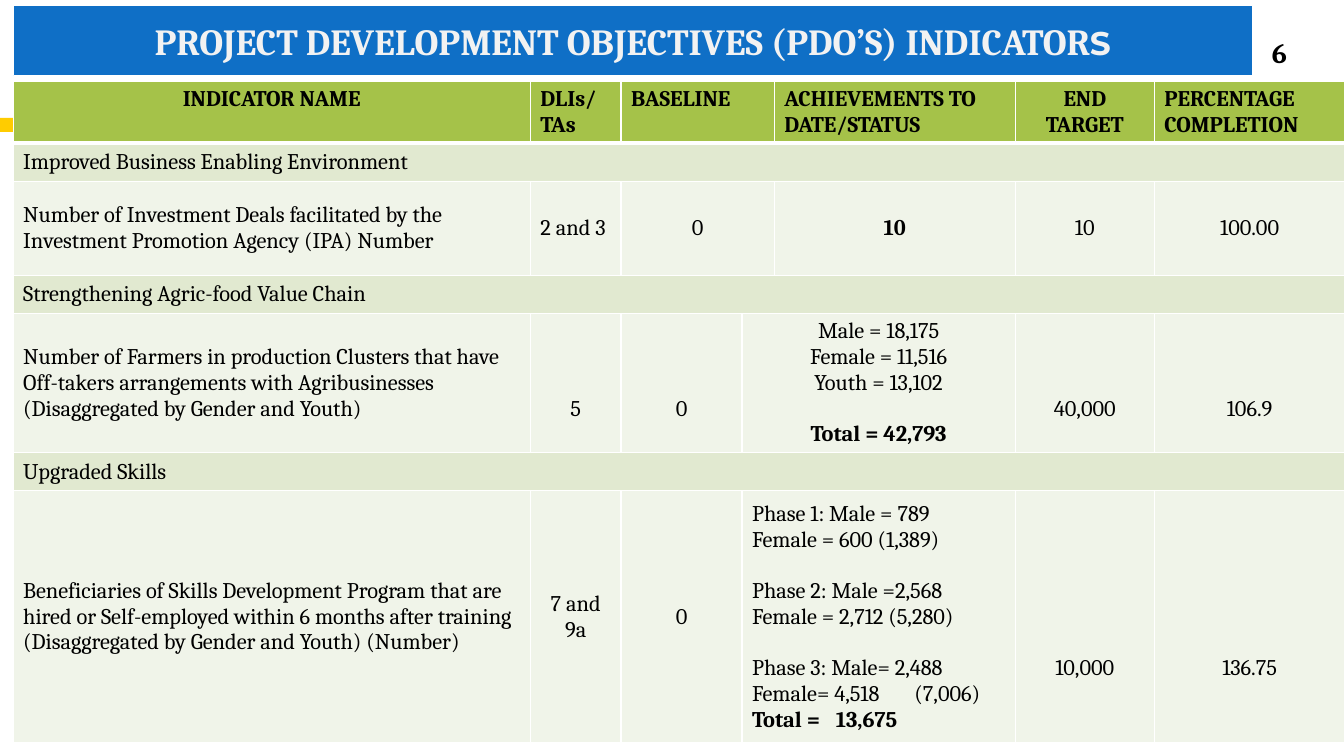
from dataclasses import dataclass

from lxml import etree
from pptx import Presentation
from pptx.dml.color import RGBColor
from pptx.enum.shapes import MSO_SHAPE
from pptx.enum.text import MSO_ANCHOR, MSO_AUTO_SIZE, PP_ALIGN
from pptx.oxml.ns import qn
from pptx.util import Inches, Pt

LEFT, CENTER = PP_ALIGN.LEFT, PP_ALIGN.CENTER
TOP, MIDDLE = MSO_ANCHOR.TOP, MSO_ANCHOR.MIDDLE
RECTANGLE = MSO_SHAPE.RECTANGLE
NO_AUTOFIT = MSO_AUTO_SIZE.NONE


@dataclass(frozen=True)
class Theme:
    font: str = "Cambria"
    accent_font: str = "Montserrat"
    banner: str = "0F6FC6"
    banner_text: str = "F2F2F2"
    stripe: str = "FFCC00"
    header: str = "A5C249"
    section: str = "E1E9D0"
    indicator: str = "F0F4E9"
    border: str = "FFFFFF"
    text: str = "000000"
    title_size: float = 26.3
    accent_size: float = 23.4
    number_size: float = 20
    table_size: float = 16
    line_height: float = 18.4


@dataclass(frozen=True)
class Line:
    text: str
    bold: bool = False
    gap: bool = False  # one line of space above
    tab: float = 0  # tab stop in inches


@dataclass(frozen=True)
class Entry:
    column: int
    lines: tuple[Line, ...]
    align: PP_ALIGN = CENTER
    span: int = 1
    drop: int = 0  # lines by which the text sits lower


THEME = Theme()
COLUMN_WIDTHS = (5.13, 0.9, 1.2, 0.32, 2.39, 1.38, 1.89)
ROW_HEIGHTS = (0.61, 0.38, 0.93, 0.38, 1.38, 0.38, 2.5)


def entry(column: int, text: str, align: PP_ALIGN = CENTER, span: int = 1,
          drop: int = 0, bold: bool = False) -> Entry:
    return Entry(column, (Line(text, bold),), align, span, drop)


HEADER = tuple(
    entry(column, text, align, span, bold=True)
    for column, text, align, span in (
        (0, "INDICATOR NAME", CENTER, 1),
        (1, "DLIs/ TAs", LEFT, 1),
        (2, "BASELINE", LEFT, 2),
        (4, "ACHIEVEMENTS TO DATE/STATUS", LEFT, 1),
        (5, "END TARGET", CENTER, 1),
        (6, "PERCENTAGE COMPLETION", LEFT, 1),
    )
)
INVESTMENT_DEALS = (
    entry(0, "Number of Investment Deals facilitated by the Investment "
             "Promotion Agency (IPA) Number", LEFT),
    entry(1, "2 and 3", LEFT),
    entry(2, "0", span=2),
    entry(4, "10", bold=True),
    entry(5, "10"),
    entry(6, "100.00"),
)
FARMERS = (
    entry(0, "Number of Farmers in production Clusters that have Off-takers "
             "arrangements with Agribusinesses (Disaggregated by Gender and Youth)", LEFT),
    entry(1, "5", drop=2),
    entry(2, "0", drop=2),
    Entry(3, (
        Line("Male = 18,175"),
        Line("Female = 11,516"),
        Line("Youth = 13,102"),
        Line("Total = 42,793", bold=True, gap=True),
    ), span=2),
    entry(5, "40,000", drop=2),
    entry(6, "106.9", drop=2),
)
SKILLS = (
    entry(0, "Beneficiaries of Skills Development Program that are hired or "
             "Self-employed within 6 months after training "
             "(Disaggregated by Gender and Youth) (Number)", LEFT),
    entry(1, "7 and 9a"),
    entry(2, "0"),
    Entry(3, (
        Line("Phase 1: Male = 789"),
        Line("Female = 600 (1,389)"),
        Line("Phase 2: Male =2,568 Female = 2,712 (5,280)", gap=True),
        Line("Phase 3: Male= 2,488", gap=True),
        Line("Female= 4,518\t(7,006)", tab=1.61),
        Line("Total =\t13,675", bold=True, tab=0.83),
    ), LEFT, span=2),
    entry(5, "10,000", drop=4),
    entry(6, "136.75", drop=4),
)


def section(name: str) -> tuple[Entry, ...]:
    return (entry(0, name, LEFT, span=len(COLUMN_WIDTHS)),)


TABLE_ROWS = (
    (THEME.header, HEADER),
    (THEME.section, section("Improved Business Enabling Environment")),
    (THEME.indicator, INVESTMENT_DEALS),
    (THEME.section, section("Strengthening Agric-food Value Chain")),
    (THEME.indicator, FARMERS),
    (THEME.section, section("Upgraded Skills")),
    (THEME.indicator, SKILLS),
)


def paint(fill, color: str) -> None:
    fill.solid()
    fill.fore_color.rgb = RGBColor.from_string(color)


def style_font(font, size: float, color: str, bold: bool, name: str = THEME.font) -> None:
    font.name, font.size, font.bold = name, Pt(size), bold
    font.color.rgb = RGBColor.from_string(color)


def add_borders(cell, top: float, bottom: float) -> None:
    properties = cell._tc.get_or_add_tcPr()
    widths = (("a:lnL", 1), ("a:lnR", 1), ("a:lnT", top), ("a:lnB", bottom))
    for position, (side, width) in enumerate(widths):
        border = etree.Element(qn(side), w=str(Pt(width)))
        fill = etree.SubElement(border, qn("a:solidFill"))
        etree.SubElement(fill, qn("a:srgbClr"), val=THEME.border)
        properties.insert(position, border)


def write_entry(cell, content: Entry) -> None:
    frame = cell.text_frame
    cell.margin_top = Inches(0.05) + Pt(content.drop * THEME.line_height)
    for index, line in enumerate(content.lines):
        paragraph = frame.add_paragraph() if index else frame.paragraphs[0]
        paragraph.text = line.text
        paragraph.alignment = content.align
        if line.tab:
            tabs = etree.SubElement(paragraph._p.get_or_add_pPr(), qn("a:tabLst"))
            etree.SubElement(tabs, qn("a:tab"), pos=str(Inches(line.tab)), algn="l")
        if line.gap:
            paragraph.space_before = Pt(THEME.line_height)
        style_font(paragraph.font, THEME.table_size, THEME.text, line.bold)


def add_indicator_table(slide) -> None:
    table = slide.shapes.add_table(
        len(ROW_HEIGHTS), len(COLUMN_WIDTHS), Inches(0.13), Inches(0.81),
        Inches(sum(COLUMN_WIDTHS)), Inches(sum(ROW_HEIGHTS))).table
    table.first_row = table.horz_banding = False
    for column, width in zip(table.columns, COLUMN_WIDTHS):
        column.width = Inches(width)
    for row, height in zip(table.rows, ROW_HEIGHTS):
        row.height = Inches(height)
    for index, (color, entries) in enumerate(TABLE_ROWS):
        for cell in table.rows[index].cells:
            paint(cell.fill, color)
            cell.vertical_anchor = MIDDLE if index else TOP
            add_borders(cell, 3 if index == 1 else 1, 3 if index == 0 else 1)
        for content in entries:
            cell = table.cell(index, content.column)
            if content.span > 1:
                cell.merge(table.cell(index, content.column + content.span - 1))
            write_entry(cell, content)


def add_stripe(slide) -> None:
    stripe = slide.shapes.add_shape(
        RECTANGLE, Inches(0), Inches(1.17), Inches(13.33), Inches(0.14))
    stripe.shadow.inherit = False
    paint(stripe.fill, THEME.stripe)
    stripe.line.fill.background()


def add_page_number(slide) -> None:
    number = slide.shapes.add_textbox(Inches(12.2), Inches(0.32), Inches(0.98), Inches(0.4))
    frame = number.text_frame
    frame.word_wrap, frame.vertical_anchor = True, MIDDLE
    paragraph = frame.paragraphs[0]
    paragraph.text, paragraph.alignment = "6", CENTER
    style_font(paragraph.font, THEME.number_size, THEME.text, True)


def format_title(slide) -> None:
    title = slide.shapes.title
    title.left, title.top = Inches(0.13), Inches(0.05)
    title.width, title.height = Inches(12.29), Inches(0.7)
    paint(title.fill, THEME.banner)
    paint(title.line.fill, THEME.border)
    title.line.width = Pt(0.75)
    frame = title.text_frame
    frame.auto_size, frame.word_wrap, frame.vertical_anchor = NO_AUTOFIT, True, MIDDLE
    paragraph = frame.paragraphs[0]
    paragraph.alignment = CENTER
    for text, size, name in (
        ("PROJECT DEVELOPMENT OBJECTIVES (PDO’S) INDICATOR", THEME.title_size, THEME.font),
        ("S", THEME.accent_size, THEME.accent_font),
    ):
        run = paragraph.add_run()
        run.text = text
        style_font(run.font, size, THEME.banner_text, True, name)


def main() -> None:
    deck = Presentation()
    deck.slide_width, deck.slide_height = Inches(13.33), Inches(7.5)
    slide = deck.slides.add_slide(deck.slide_layouts[5])
    add_stripe(slide)
    add_indicator_table(slide)
    add_page_number(slide)
    format_title(slide)
    deck.save("out.pptx")


if __name__ == "__main__":
    main()
